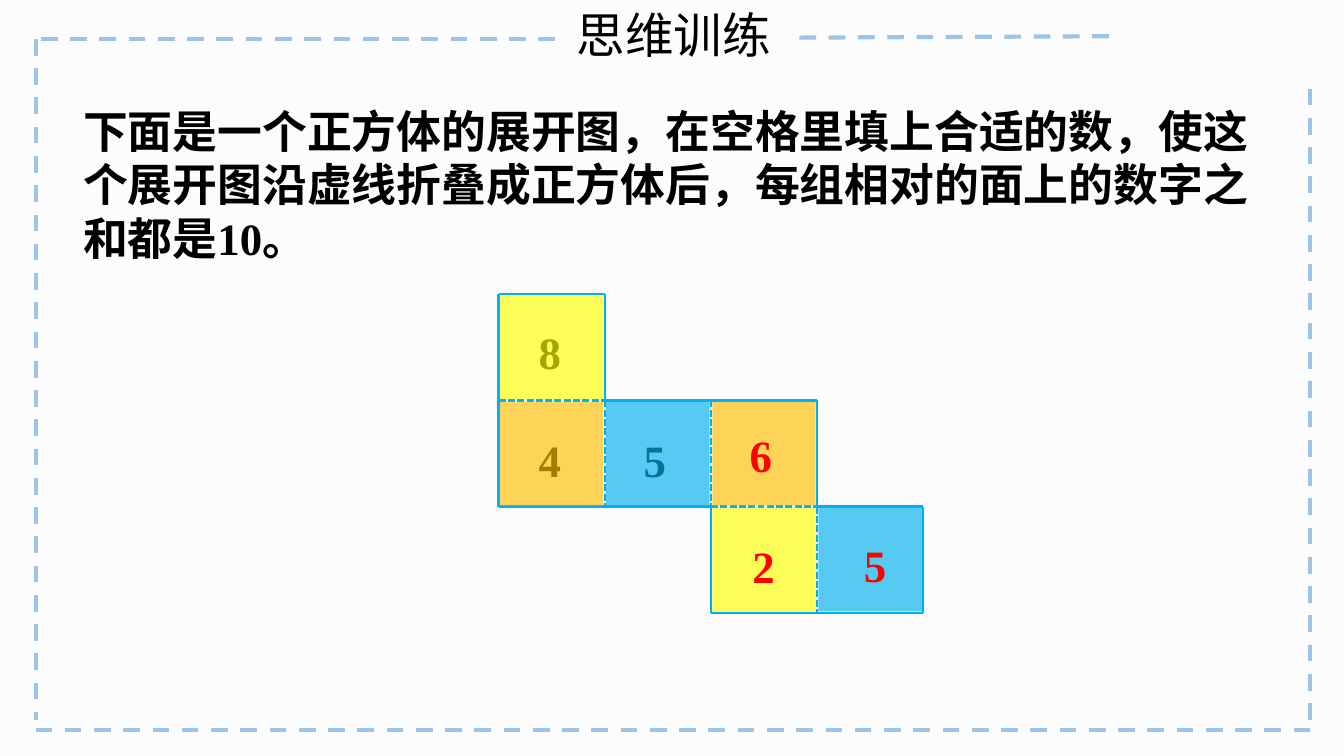
from collections import Counter

from lxml import etree
from pptx import Presentation
from pptx.dml.color import RGBColor
from pptx.enum.dml import MSO_LINE
from pptx.enum.shapes import MSO_CONNECTOR, MSO_SHAPE
from pptx.enum.text import MSO_ANCHOR, MSO_AUTO_SIZE, PP_ALIGN
from pptx.oxml.ns import qn
from pptx.util import Inches, Pt

DASH, SHORT_DASH = MSO_LINE.DASH, MSO_LINE.SQUARE_DOT
STRAIGHT, RECTANGLE = MSO_CONNECTOR.STRAIGHT, MSO_SHAPE.RECTANGLE
TOP, LEFT, FIXED = MSO_ANCHOR.TOP, PP_ALIGN.LEFT, MSO_AUTO_SIZE.NONE
TITLE_ONLY = 5
HAN_FONT, LATIN_FONT = "Noto Sans CJK SC", "Times New Roman"
BLACK, RED, BLUE, PALE_BLUE = "000000", "FF0000", "00B0F0", "9DC3E6"
YELLOW, ORANGE = "FFFF00", "FFC000"
CELL, GAP, OPACITY = 0.79, 0.01, 65

QUESTION = (
    "下面是一个正方体的展开图，在空格里填上合适的数，使这个展开图沿虚线折叠成正方体后，"
    "每组相对的面上的数字之和都是10。"
)
FACES = [
    ((0, 0), YELLOW, "8", BLACK, (0.2, 0.1)),
    ((0, 1), ORANGE, "4", BLACK, (0.2, 0.11)),
    ((1, 1), BLUE, "5", BLACK, (0.19, 0.11)),
    ((2, 1), ORANGE, "6", RED, (0.19, 0.07)),
    ((2, 2), YELLOW, "2", RED, (0.21, 0.11)),
    ((3, 2), BLUE, "5", RED, (0.25, 0.1)),
]


def color(value):
    """Turn a hex string into a colour."""
    return RGBColor.from_string(value)


def write(frame, text, size, font, fill, bold=False, spacing=1.0):
    """Fill a text frame with one formatted paragraph."""
    for name, value in {"word_wrap": True, "auto_size": FIXED, "vertical_anchor": TOP}.items():
        setattr(frame, name, value)
    para = frame.paragraphs[0]
    para.alignment, para.line_spacing = LEFT, spacing
    span = para.add_run()
    span.text = text
    for name, value in {"name": font, "size": Pt(size), "bold": bold}.items():
        setattr(span.font, name, value)
    span.font.color.rgb = color(fill)
    east_asian = etree.SubElement(span.font._element, qn("a:ea"))
    east_asian.set("typeface", HAN_FONT)


def add_text(page, box, text, **style):
    """Add a text box."""
    shape = page.shapes.add_textbox(*map(Inches, box))
    write(shape.text_frame, text, **style)


def add_line(page, start, end, stroke, width, dash=None):
    """Add a straight line without a shadow."""
    line = page.shapes.add_connector(STRAIGHT, *map(Inches, (*start, *end)))
    line.line.color.rgb = color(stroke)
    line.line.width = Pt(width)
    if dash:
        line.line.dash_style = dash
    etree.SubElement(line._element.spPr, qn("a:effectLst"))


def add_frame(page, box):
    """Draw the dashed border with its opening around the title."""
    left, top, width, height = box
    right, bottom = left + width, top + height
    for start, end in [
        ((left, top), (left, bottom - 0.07)),
        ((right, top + 0.37), (right, bottom)),
        ((right, bottom), (left, bottom)),
        ((right - 1.5, top - 0.02), (left + 5.65, top - 0.01)),
        ((left + 3.86, top), (left, top)),
    ]:
        add_line(page, start, end, PALE_BLUE, 2.25, DASH)


def add_title(page, box):
    """Place and format the title."""
    title = page.shapes.title
    title.left, title.top, title.width, title.height = map(Inches, box)
    write(title.text_frame, "思维训练", 26, HAN_FONT, BLACK)


def add_edges(page, left, top):
    """Draw outer edges solid and shared fold edges dashed."""
    edges = Counter()
    for (column, row), *_ in FACES:
        for step in (0, 1):
            edges[(column, row + step), (column + 1, row + step)] += 1
            edges[(column + step, row), (column + step, row + 1)] += 1
    for ends, uses in edges.items():
        start, end = [(left + x * CELL, top + y * CELL) for x, y in ends]
        add_line(page, start, end, BLUE, 1.25, SHORT_DASH if uses > 1 else None)


def add_digits(page, left, top, fill):
    """Write the digits of one colour."""
    for (column, row), _, digit, ink, (dx, dy) in FACES:
        if ink == fill:
            box = (left + column * CELL + dx, top + row * CELL + dy, 0.4, 0.54)
            add_text(page, box, digit, size=24, font=LATIN_FONT, fill=ink, bold=True, spacing=1.2)


def add_faces(page, left, top):
    """Lay a translucent square over each face."""
    side = CELL - 2 * GAP
    for (column, row), fill, *_ in FACES:
        box = (left + column * CELL + GAP, top + row * CELL + GAP, side, side)
        face = page.shapes.add_shape(RECTANGLE, *map(Inches, box))
        face.shadow.inherit = False
        face.fill.solid()
        face.fill.fore_color.rgb = color(fill)
        face.line.fill.background()
        tint = face._element.spPr.find(qn("a:solidFill"))[0]
        etree.SubElement(tint, qn("a:alpha")).set("val", str(OPACITY * 1000))


def add_cube_net(page, left, top):
    """Build the unfolded cube with given digits under and answers over the faces."""
    add_edges(page, left, top)
    add_digits(page, left, top, BLACK)
    add_faces(page, left, top)
    add_digits(page, left, top, RED)


def main():
    """Build and save the deck."""
    deck = Presentation()
    deck.slide_width = Inches(10)
    deck.slide_height = deck.slide_width * 9 // 16
    page = deck.slides.add_slide(deck.slide_layouts[TITLE_ONLY])
    page.background.fill.solid()
    page.background.fill.fore_color.rgb = color("FCFCFC")
    add_frame(page, (0.27, 0.29, 9.48, 5.14))
    add_title(page, (4.19, -0.01, 1.73, 0.54))
    add_text(page, (0.52, 0.72, 9.04, 1.31), QUESTION, size=24, font=LATIN_FONT, fill=BLACK, bold=True)
    add_cube_net(page, 3.71, 2.19)
    deck.save("out.pptx")


if __name__ == "__main__":
    main()
